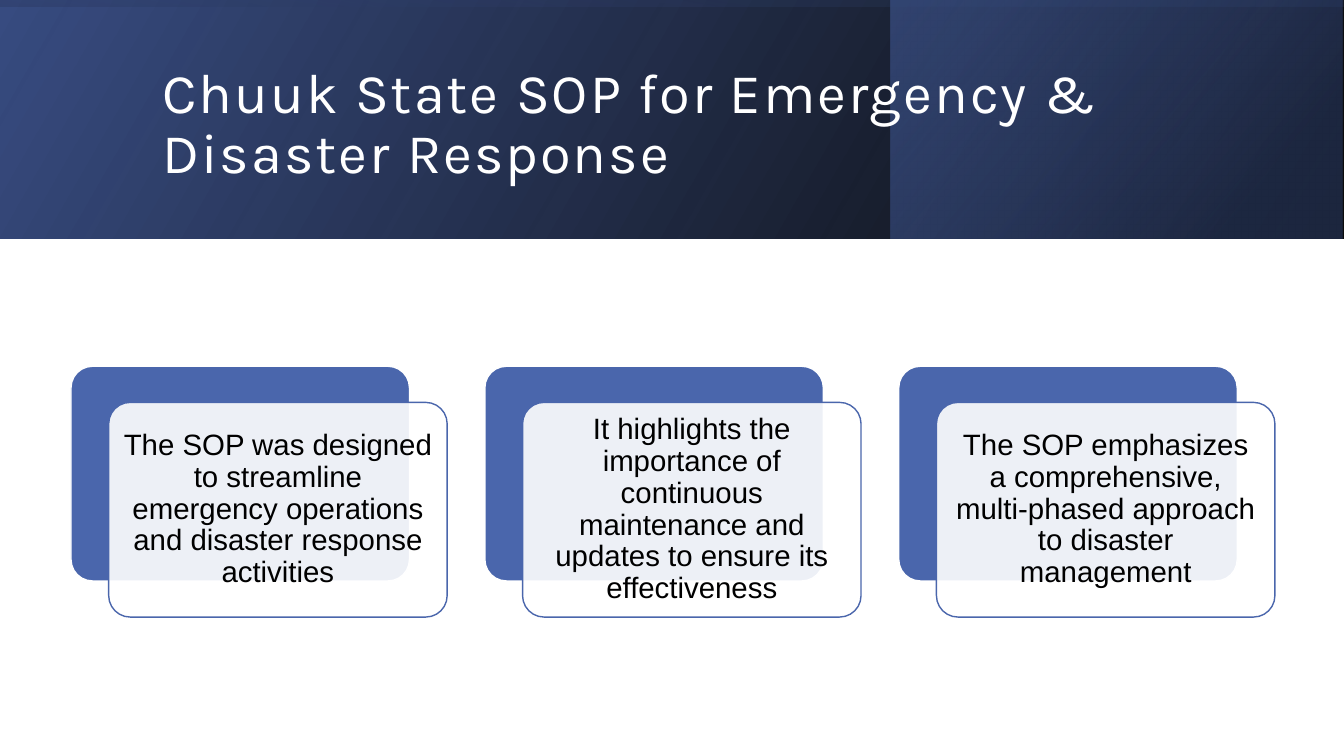
from pptx import Presentation
from pptx import util as u
from pptx.dml.color import RGBColor
from pptx.enum import shapes, text
from pptx.oxml.ns import qn
from lxml import etree

COLORS = {"blue": "4A66AC", "navy": "384C81", "dark": "253356",
          "black": "000000", "white": "FFFFFF"}
WIDTH, HEIGHT, BAND = 33.87, 19.05, 6.02


class Deck:
    """Holds the colours and the current slide."""

    def __init__(self):
        self.prs = Presentation()
        self.prs.slide_width, self.prs.slide_height = u.Cm(WIDTH), u.Cm(HEIGHT)
        self.slide = self.prs.slides.add_slide(self.prs.slide_layouts[6])

    def color(self, name):
        return RGBColor.from_string(COLORS[name])

    def alpha(self, fill_el, percents):
        for clr, pct in zip(fill_el.iter(qn("a:srgbClr")), percents):
            etree.SubElement(clr, qn("a:alpha")).set("val", str(pct * 1000))

    def shape(self, kind, box):
        sp = self.slide.shapes.add_shape(kind, *map(u.Cm, box))
        sp.shadow.inherit = False
        return sp

    def gradient(self, box, stops, angle, rotation=0):
        sp = self.shape(shapes.MSO_SHAPE.RECTANGLE, box)
        sp.rotation = rotation
        sp.line.fill.background()
        sp.fill.gradient()
        sp.fill.gradient_angle = angle
        for stop, (position, name, _) in zip(sp.fill.gradient_stops, stops):
            stop.position = position
            stop.color.rgb = self.color(name)
        self.alpha(sp._element.spPr, [pct for _, _, pct in stops])
        sp._element.spPr.xfrm.set("flipH", "1")

    def card(self, box, fill, line, opacity=100):
        sp = self.shape(shapes.MSO_SHAPE.ROUNDED_RECTANGLE, box)
        sp.adjustments[0] = 0.1
        sp.fill.solid()
        sp.fill.fore_color.rgb = self.color(fill)
        if opacity < 100:
            self.alpha(sp._element.spPr, [opacity])
        sp.line.color.rgb = self.color(line)
        sp.line.width = u.Pt(1)

    def text(self, box, words, fmt, color, align, inset=None, spacing=0):
        tf = self.slide.shapes.add_textbox(*map(u.Cm, box)).text_frame
        tf.word_wrap = True
        tf.vertical_anchor = text.MSO_ANCHOR.MIDDLE
        if inset is not None:
            for side in ("left", "top", "right", "bottom"):
                setattr(tf, f"margin_{side}", u.Cm(inset))
        p = tf.paragraphs[0]
        p.alignment, p.line_spacing = align, 0.9
        r = p.add_run()
        r.text = words
        for key, value in fmt.items():
            setattr(r.font, key, value)
        r.font.color.rgb = self.color(color)
        if spacing:
            r._r.get_or_add_rPr().set("spc", str(int(spacing * 100)))


def main():
    deck = Deck()

    # Header band: three layered gradients, the last one turned on its side
    deck.gradient((0, 0, WIDTH, BAND),
                  [(0, "black", 96), (1, "navy", 100)], 30)
    deck.gradient((22.45, 0, 11.39, BAND),
                  [(0.19, "dark", 68), (1, "blue", 48)], 40)
    shift = (WIDTH - BAND) / 2
    deck.gradient((shift, -shift, BAND, WIDTH),
                  [(0.23, "navy", 16), (0.99, "black", 45)], 10, rotation=270)

    # Title
    deck.text((3.84, 0.97, 27, 4.37),
              "Chuuk State SOP for Emergency & Disaster Response",
              {"name": "Karla", "size": u.Pt(40)}, "white",
              text.PP_ALIGN.LEFT, spacing=1.5)

    # Cards: a blue back plate, a translucent front plate and its text
    points = [
        "The SOP was designed to streamline emergency operations and disaster "
        "response activities",
        "It highlights the importance of continuous maintenance and updates to "
        "ensure its effectiveness",
        "The SOP emphasizes a comprehensive, multi-phased approach to disaster "
        "management",
    ]
    left, top, width, height, step = 1.79, 9.23, 8.53, 5.41, 10.43
    offset_x, offset_y, pad = 0.95, 0.91, 0.16
    for i, point in enumerate(points):
        x = left + i * step
        front_x, front_y = x + offset_x, top + offset_y
        deck.card((x, top, width, height), "blue", "white")
        deck.card((front_x, front_y, width, height), "white", "blue", opacity=90)
        deck.text((front_x + pad, front_y + pad, width - 2 * pad, height - 2 * pad),
                  point, {"name": "Arial", "size": u.Pt(21)}, "black",
                  text.PP_ALIGN.CENTER, inset=0.22)

    deck.prs.save("out.pptx")


if __name__ == "__main__":
    main()
